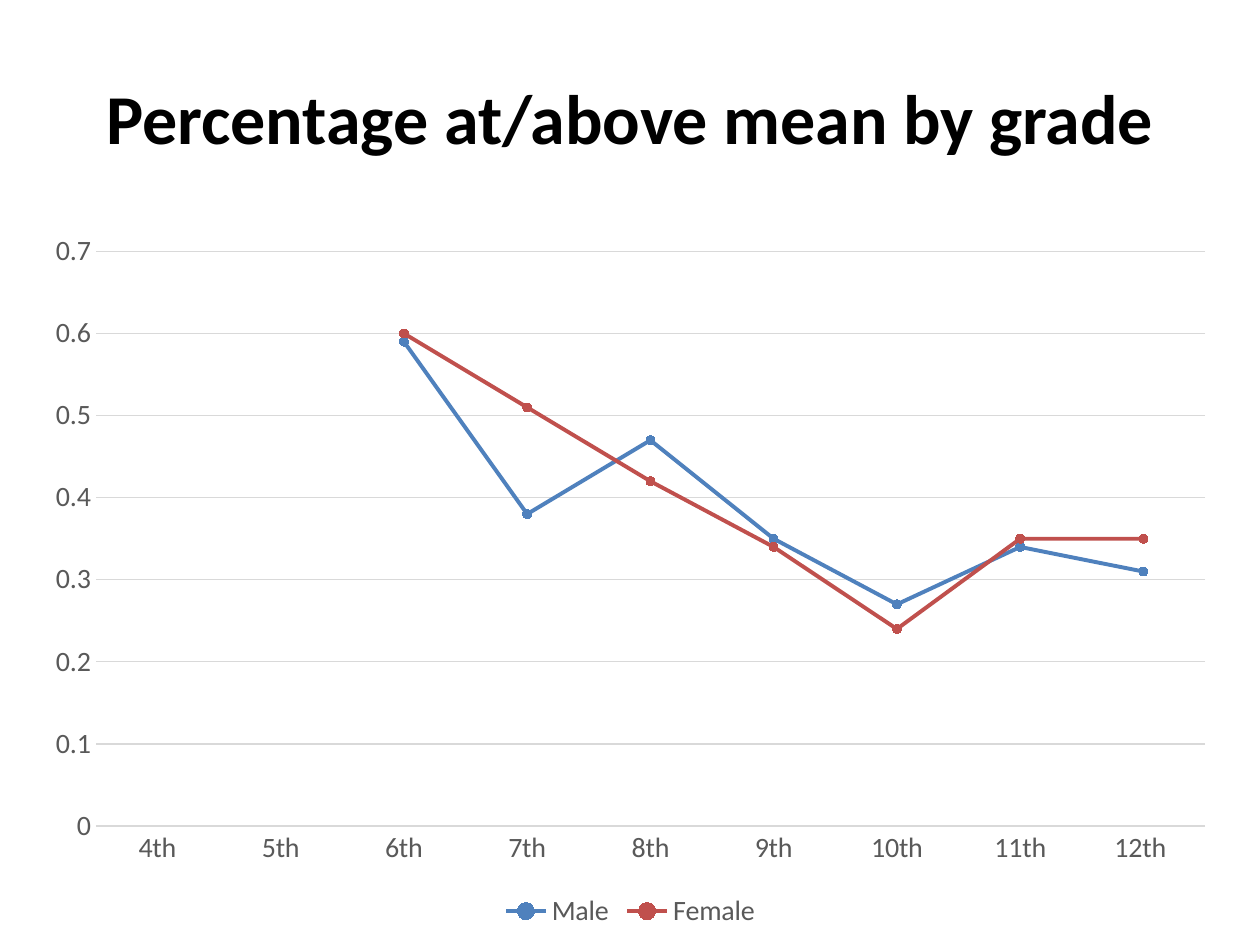
from pptx import Presentation
from pptx.chart.data import CategoryChartData
from pptx.dml.color import RGBColor
from pptx.enum.chart import XL_CHART_TYPE, XL_LEGEND_POSITION, XL_MARKER_STYLE, XL_TICK_MARK
from pptx.enum.text import MSO_ANCHOR, PP_ALIGN
from pptx.util import Pt

EMU_PER_PX = 914400 / 126
BLACK = RGBColor(0x00, 0x00, 0x00)
GRAY = RGBColor(0x59, 0x59, 0x59)
LIGHT_GRAY = RGBColor(0xD9, 0xD9, 0xD9)
BLUE = RGBColor(0x4F, 0x81, 0xBD)
RED = RGBColor(0xC0, 0x50, 0x4D)
LINE_MARKERS = XL_CHART_TYPE.LINE_MARKERS
BOTTOM = XL_LEGEND_POSITION.BOTTOM
CIRCLE = XL_MARKER_STYLE.CIRCLE
NO_TICK = XL_TICK_MARK.NONE
MIDDLE = MSO_ANCHOR.MIDDLE
CENTER = PP_ALIGN.CENTER

GRADES = ["4th", "5th", "6th", "7th", "8th", "9th", "10th", "11th", "12th "]
SHARES = {
    "Male": (BLUE, [None, None, 0.59, 0.38, 0.47, 0.35, 0.27, 0.34, 0.31]),
    "Female": (RED, [None, None, 0.6, 0.51, 0.42, 0.34, 0.24, 0.35, 0.35]),
}


def px(*lengths):
    return [round(length * EMU_PER_PX) for length in lengths]


def style_font(font, size, color, name, bold=False):
    font.name = name
    font.size = Pt(size)
    font.bold = bold
    font.color.rgb = color


def style_line(line, color, width):
    line.color.rgb = color
    line.width = Pt(width)


def write_text(frame, text, *, align=CENTER, anchor=MIDDLE, **font_format):
    frame.word_wrap = True
    frame.vertical_anchor = anchor
    paragraph = frame.paragraphs[0]
    paragraph.alignment = align
    run = paragraph.add_run()
    run.text = text
    style_font(run.font, **font_format)


class SlideBuilder:
    font_name = "Calibri"
    title_size = 40
    label_size = 16

    def __init__(self, slide):
        self.slide = slide

    def title(self, text, left, top, width, height):
        heading = self.slide.shapes.add_textbox(*px(left, top, width, height))
        write_text(heading.text_frame, text, size=self.title_size,
                   color=BLACK, name=self.font_name, bold=True)

    def label(self, font):
        style_font(font, self.label_size, GRAY, self.font_name)

    def axis(self, axis):
        axis.major_tick_mark = NO_TICK
        axis.minor_tick_mark = NO_TICK
        self.label(axis.tick_labels.font)

    def line_chart(self, categories, series, left, top, width, height):
        data = CategoryChartData()
        data.categories = categories
        for name, (_, values) in series.items():
            data.add_series(name, values)
        chart = self.slide.shapes.add_chart(
            LINE_MARKERS, *px(left, top, width, height), data).chart
        chart.has_title = False
        style_font(chart.font, 10, BLACK, self.font_name)

        grades, shares = chart.category_axis, chart.value_axis
        self.axis(grades)
        self.axis(shares)
        style_line(grades.format.line, LIGHT_GRAY, 0.75)
        shares.format.line.fill.background()
        shares.has_major_gridlines = True
        style_line(shares.major_gridlines.format.line, LIGHT_GRAY, 0.75)
        shares.minimum_scale = 0
        shares.maximum_scale = 0.7
        shares.major_unit = 0.1

        chart.has_legend = True
        chart.legend.position = BOTTOM
        chart.legend.include_in_layout = False
        self.label(chart.legend.font)

        plot = chart.plots[0]
        plot.vary_by_categories = False
        for trend, (color, _) in zip(plot.series, series.values()):
            trend.smooth = False
            style_line(trend.format.line, color, 2.25)
            marker = trend.marker
            marker.style = CIRCLE
            marker.size = 5
            marker.format.fill.solid()
            marker.format.fill.fore_color.rgb = color
            style_line(marker.format.line, color, 0.75)


def main():
    deck = Presentation()
    deck.slide_width, deck.slide_height = px(1260, 945)
    builder = SlideBuilder(deck.slides.add_slide(deck.slide_layouts[6]))
    builder.title("Percentage at/above mean by grade", 63, 38, 1134, 158)
    builder.line_chart(GRADES, SHARES, 32, 220, 1197, 714)
    deck.save("out.pptx")


if __name__ == "__main__":
    main()
